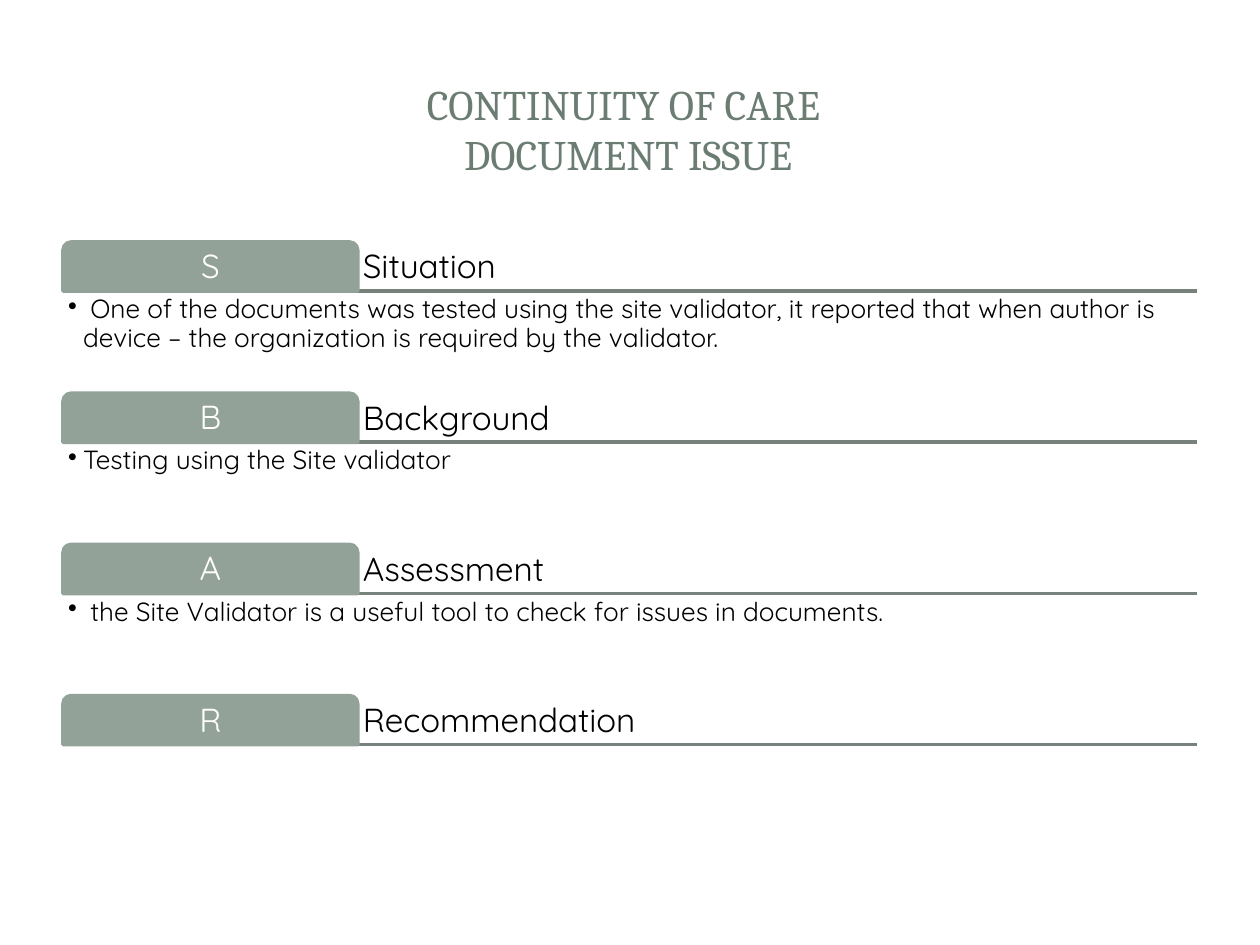
from lxml import etree
from pptx import Presentation
from pptx.dml.color import RGBColor
from pptx.enum.shapes import MSO_CONNECTOR, MSO_SHAPE
from pptx.enum.text import MSO_ANCHOR, PP_ALIGN
from pptx.oxml.ns import qn
from pptx.util import Inches, Pt

STRAIGHT = MSO_CONNECTOR.STRAIGHT
TAB = MSO_SHAPE.ROUND_2_SAME_RECTANGLE
TOP, MIDDLE, BOTTOM = MSO_ANCHOR.TOP, MSO_ANCHOR.MIDDLE, MSO_ANCHOR.BOTTOM
LEFT, CENTER = PP_ALIGN.LEFT, PP_ALIGN.CENTER

SAGE, RULE, TITLE = "93A299", "76827B", "6B7D72"
BLACK, WHITE = "000000", "FFFFFF"

# Grid of the four sections, in inches
X, WIDTH, TAB_WIDTH = 0.5, 9, 2.34
Y, ROW_STEP, HEAD_HEIGHT, BODY_HEIGHT = 1.92, 1.2, 0.39, 0.79
INSET, INDENT = 0.04, 0.12

SECTIONS = [
    ("Situation", " One of the documents was tested using the site validator, "
     "it reported that when author is device – the organization is required "
     "by the validator."),
    ("Background", "Testing using the Site validator"),
    ("Assessment", " the Site Validator is a useful tool to check for issues "
     "in documents."),
    ("Recommendation", None),
]


def rgb(color):
    return RGBColor.from_string(color)


def set_text(sp, text, size, color, font="Quicksand", anchor=TOP, align=LEFT):
    tf = sp.text_frame
    tf.text = text
    tf.word_wrap = True
    tf.vertical_anchor = anchor
    tf.margin_left = tf.margin_right = Inches(INSET)
    tf.margin_top = tf.margin_bottom = Inches(INSET)
    p = tf.paragraphs[0]
    p.alignment = align
    for r in p.runs:
        r.font.size = Pt(size)
        r.font.name = font
        r.font.color.rgb = rgb(color)
    return p


def add_title(s, text):
    sp = s.shapes.title
    sp.left, sp.top, sp.width, sp.height = map(Inches, (0.47, 0.45, 9.03, 1.14))
    set_text(sp, text, 24, TITLE, "Cambria", MIDDLE, CENTER)


def add_rule(s, y):
    line = s.shapes.add_connector(
        STRAIGHT, Inches(X), Inches(y), Inches(X + WIDTH), Inches(y))
    line.line.color.rgb = rgb(RULE)
    line.line.width = Pt(2)
    etree.SubElement(line._element.spPr, qn("a:effectLst"))


def add_tab(s, y, letter):
    sp = s.shapes.add_shape(
        TAB, Inches(X), Inches(y), Inches(TAB_WIDTH), Inches(HEAD_HEIGHT))
    sp.shadow.inherit = False
    sp.fill.solid()
    sp.fill.fore_color.rgb = rgb(SAGE)
    sp.line.color.rgb = rgb(SAGE)
    sp.line.width = Pt(2)
    set_text(sp, letter, 19, WHITE, anchor=MIDDLE, align=CENTER).line_spacing = 0.9


def add_label(s, x, y, width, height, text, size, anchor):
    sp = s.shapes.add_textbox(*map(Inches, (x, y, width, height)))
    p = set_text(sp, text, size, BLACK, anchor=anchor)
    p.line_spacing = 0.9
    return p


def add_bullet(p):
    pPr = p._p.get_or_add_pPr()
    pPr.set("marL", str(Inches(INDENT)))
    pPr.set("indent", str(-Inches(INDENT)))
    etree.SubElement(pPr, qn("a:buChar"), char="•")


def add_section(s, row, heading, detail):
    top = Y + row * ROW_STEP
    bottom = top + HEAD_HEIGHT
    add_rule(s, bottom)
    add_label(s, X + TAB_WIDTH, top, WIDTH - TAB_WIDTH, HEAD_HEIGHT,
              heading, 19, BOTTOM)
    add_tab(s, top, heading[0])
    if detail:
        add_bullet(add_label(s, X, bottom, WIDTH, BODY_HEIGHT, detail, 15, TOP))


def main():
    prs = Presentation()
    prs.slide_width, prs.slide_height = Inches(10), Inches(7.5)
    s = prs.slides.add_slide(prs.slide_layouts[5])
    add_title(s, "CONTINUITY OF CARE \vDOCUMENT ISSUE")
    for row, (heading, detail) in enumerate(SECTIONS):
        add_section(s, row, heading, detail)
    prs.save("out.pptx")


if __name__ == "__main__":
    main()
